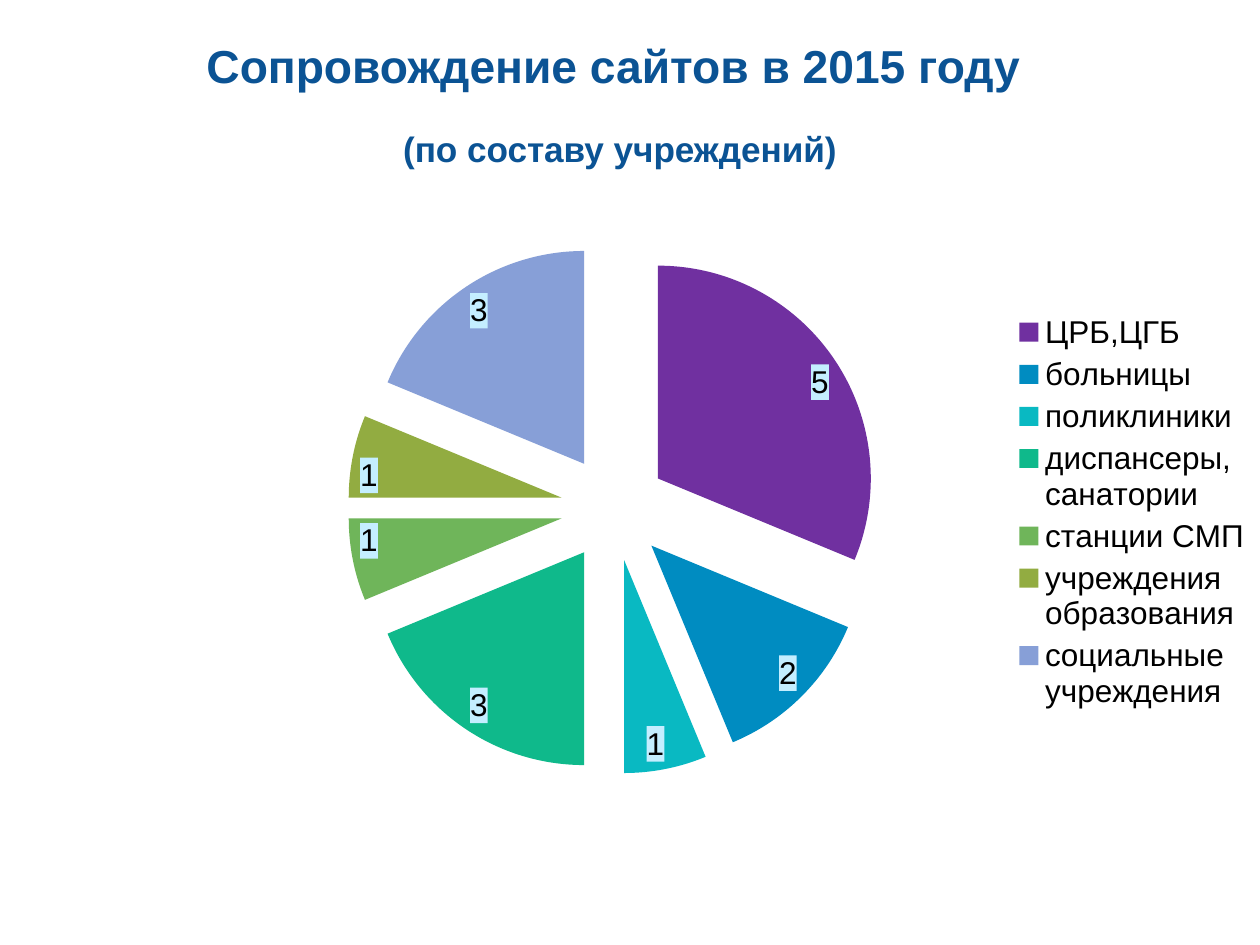
import pptx
import pptx.util
import pptx.chart.data
import pptx.enum.chart
import pptx.enum.text
import pptx.oxml
import pptx.oxml.ns
from pptx.dml.color import RGBColor

THEME = {
    "font": "Arial", "head": 26.4, "sub": 20.1, "chart": 18,
    "blue": "0B5394", "ink": "000000", "label": "C4EEFF",
}
PARTS = [
    ("ЦРБ,ЦГБ", 5, "7030A0"),
    ("больницы", 2, "008CC1"),
    ("поликлиники", 1, "09B9C2"),
    ("диспансеры, санатории", 3, "0FB98B"),
    ("станции СМП", 1, "6FB55A"),
    ("учреждения образования", 1, "92AC41"),
    ("социальные учреждения", 3, "879FD7"),
]
qn = pptx.oxml.ns.qn
spaces = pptx.oxml.ns.nsdecls("c", "a")


def write(para, text, size, color, gap=0, indent=0):
    para.alignment = pptx.enum.text.PP_ALIGN.CENTER
    para.space_before = pptx.util.Pt(gap)
    para._p.get_or_add_pPr().set("marL", str(pptx.util.Inches(indent)))
    run = para.add_run()
    run.text = text
    run.font.name = THEME["font"]
    run.font.size = pptx.util.Pt(size)
    run.font.bold = True
    run.font.color.rgb = RGBColor.from_string(color)


def layout(x, y, wide, high, inner=False):
    target = '<c:layoutTarget val="inner"/>' if inner else ""
    return pptx.oxml.parse_xml(
        f'<c:layout {spaces}><c:manualLayout>{target}'
        '<c:xMode val="edge"/><c:yMode val="edge"/>'
        f'<c:x val="{x}"/><c:y val="{y}"/><c:w val="{wide}"/><c:h val="{high}"/>'
        '</c:manualLayout></c:layout>')


deck = pptx.Presentation()
deck.slide_width = pptx.util.Inches(10)
deck.slide_height = pptx.util.Inches(7.5)
W, H = deck.slide_width, deck.slide_height
slide = deck.slides.add_slide(deck.slide_layouts[5])

# Title and subtitle
title = slide.shapes.title
title.left, title.top = int(W * 0.062), int(H * 0.04)
title.width, title.height = int(W * 0.85), int(H * 0.18)
frame = title.text_frame
frame.word_wrap = True
frame.auto_size = pptx.enum.text.MSO_AUTO_SIZE.NONE
frame.vertical_anchor = pptx.enum.text.MSO_ANCHOR.TOP
frame.margin_top = 0
write(frame.paragraphs[0], "Сопровождение сайтов в 2015 году",
      THEME["head"], THEME["blue"])
write(frame.add_paragraph(), "(по составу учреждений)",
      THEME["sub"], THEME["blue"], gap=19.5, indent=0.1)

# Pie chart
data = pptx.chart.data.CategoryChartData()
data.categories = [name for name, _, _ in PARTS]
data.add_series("Series 1", [count for _, count, _ in PARTS])
chart = slide.shapes.add_chart(
    pptx.enum.chart.XL_CHART_TYPE.PIE, int(W * 0.186), int(H * 0.19),
    int(W * 0.814), int(H * 0.696), data).chart
chart.has_title = False
chart.font.name = THEME["font"]
chart.font.size = pptx.util.Pt(THEME["chart"])
chart.font.color.rgb = RGBColor.from_string(THEME["ink"])
plot = chart.plots[0]
plot.vary_by_categories = True

# Slices, pulled apart
series = plot.series[0]
series._element.find(qn("c:tx")).addnext(
    pptx.oxml.parse_xml(f'<c:explosion {spaces} val="25"/>'))
for spot, (_, _, color) in enumerate(PARTS):
    fill = series.points[spot].format.fill
    fill.solid()
    fill.fore_color.rgb = RGBColor.from_string(color)

# Value labels on a pale ground
labels = series.data_labels
labels.show_value = True
labels.position = pptx.enum.chart.XL_LABEL_POSITION.INSIDE_END
labels.font.size = pptx.util.Pt(THEME["chart"])
labels._element.find(qn("c:txPr")).addprevious(pptx.oxml.parse_xml(
    f'<c:spPr {spaces}><a:solidFill><a:srgbClr val="{THEME["label"]}"/>'
    '</a:solidFill></c:spPr>'))

# Legend and places of both parts
chart.has_legend = True
legend = chart.legend
legend.position = pptx.enum.chart.XL_LEGEND_POSITION.RIGHT
legend.include_in_layout = False
area = chart._chartSpace.chart.plotArea
for node in (area, legend._element):
    for old in node.findall(qn("c:layout")):
        node.remove(old)
area.insert(0, layout(0.051, 0.095, 0.638, 0.809, inner=True))
legend._element.find(qn("c:legendPos")).addnext(layout(0.755, 0.195, 0.24, 0.62))

deck.save("out.pptx")
